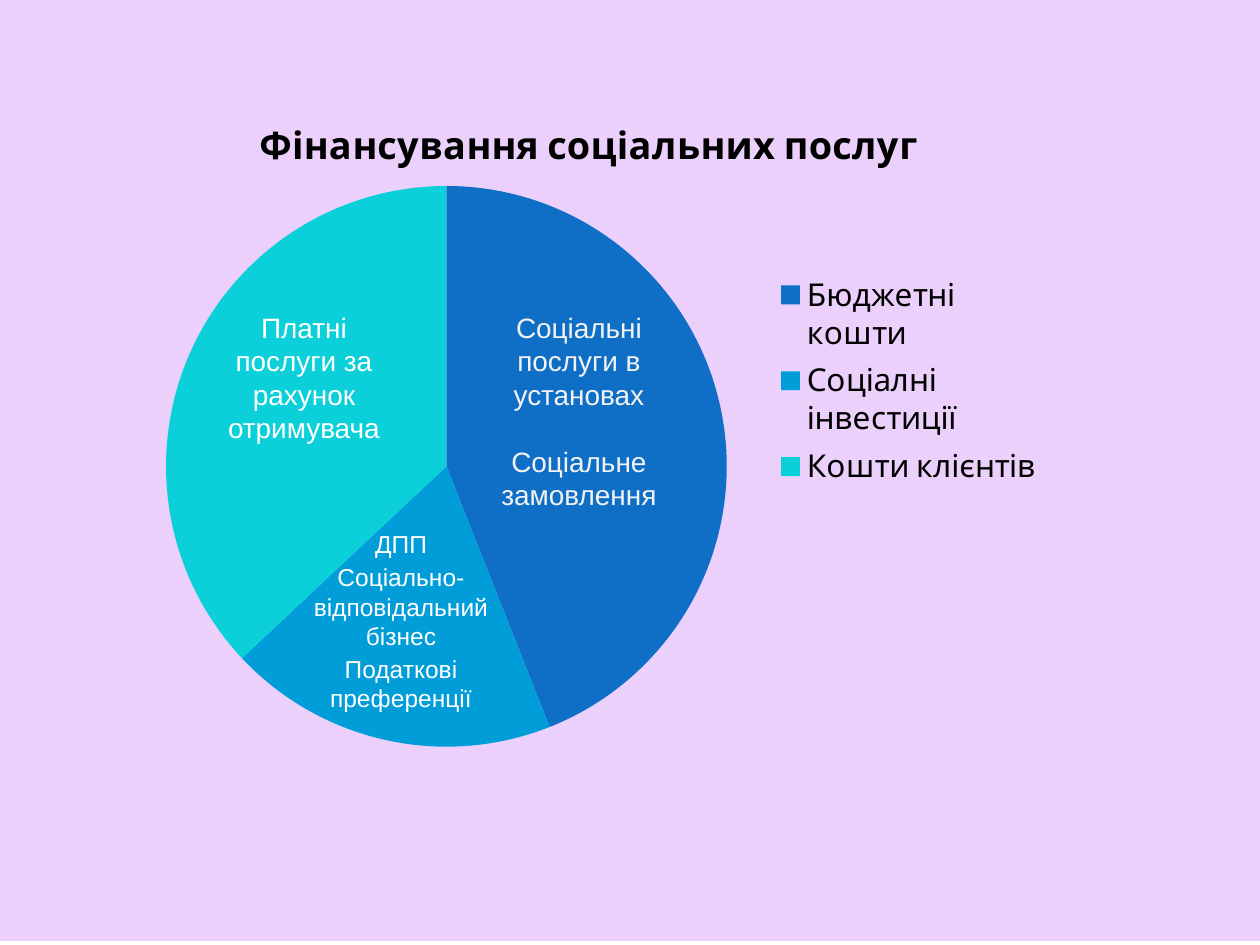
import pptx
import pptx.chart.data
import pptx.dml.color
import pptx.enum.chart
import pptx.enum.shapes
import pptx.enum.text
import pptx.oxml
import pptx.util

RGBColor = pptx.dml.color.RGBColor
Pt = pptx.util.Pt

LILAC = RGBColor(0xEB, 0xD0, 0xFC)
BLACK = RGBColor(0x00, 0x00, 0x00)
WHITE = RGBColor(0xFF, 0xFF, 0xFF)
OFF_WHITE = RGBColor(0xF2, 0xF2, 0xF2)
SLICE_COLORS = [
    RGBColor(0x0F, 0x6F, 0xC6),
    RGBColor(0x00, 0x9D, 0xD9),
    RGBColor(0x0B, 0xD0, 0xD9),
]
SLIDE_BOX = (0, 0, 1260, 945)
CHART_BOX = (126, 91, 926, 674)
LAYOUT_XML = (
    '<c:layout xmlns:c="http://schemas.openxmlformats.org/drawingml/2006/chart">'
    '<c:manualLayout>{target}<c:xMode val="edge"/><c:yMode val="edge"/>'
    '<c:x val="{x}"/><c:y val="{y}"/><c:w val="{w}"/><c:h val="{h}"/>'
    '</c:manualLayout></c:layout>'
)


def px(length):
    return pptx.util.Emu(round(length * 914400 / 126))


def place(box):
    return [px(length) for length in box]


def layout(x, y, w, h, target=""):
    """Chart layout element, in fractions of the chart's size."""
    return pptx.oxml.parse_xml(LAYOUT_XML.format(x=x, y=y, w=w, h=h, target=target))


def style_font(font, size, color, name, bold=False):
    font.size = Pt(size)
    font.color.rgb = color
    font.name = name
    font.bold = bold


def add_backdrop(slide, box):
    left, top, width, height = box
    shape = slide.shapes.add_shape(
        pptx.enum.shapes.MSO_SHAPE.RECTANGLE, *place((left, top - 4, width, height)))
    shape.shadow.inherit = False
    shape.fill.solid()
    shape.fill.fore_color.rgb = LILAC
    shape.line.fill.background()


def add_funding_chart(slide, box):
    data = pptx.chart.data.CategoryChartData()
    data.categories = ["Бюджетні кошти", "Соціалні інвестиції", "Кошти клієнтів"]
    data.add_series("Series 1", (44, 19, 37))
    chart = slide.shapes.add_chart(
        pptx.enum.chart.XL_CHART_TYPE.PIE, *place(box), data).chart
    style_font(chart.font, 18, BLACK, "Cabin")

    chart.has_title = True
    run = chart.chart_title.text_frame.paragraphs[0].add_run()
    run.text = "Фінансування соціальних послуг"
    style_font(run.font, 21.6, BLACK, "Cabin", bold=True)
    chart.chart_title.include_in_layout = False

    chart.has_legend = True
    legend = chart.legend
    legend.position = pptx.enum.chart.XL_LEGEND_POSITION.RIGHT
    legend.include_in_layout = False
    style_font(legend.font, 18, BLACK, "Cabin")
    legend_position = legend._element.find(pptx.oxml.ns.qn("c:legendPos"))
    legend_position.addnext(layout(0.7, 0.26, 0.29, 0.34))

    plot_area = chart._chartSpace.chart.plotArea
    for old_layout in plot_area.findall(pptx.oxml.ns.qn("c:layout")):
        plot_area.remove(old_layout)
    plot_area.insert(
        0, layout(0.043, 0.141, 0.606, 0.832, '<c:layoutTarget val="inner"/>'))

    plot = chart.plots[0]
    plot.vary_by_categories = True
    for index, color in enumerate(SLICE_COLORS):
        point_format = plot.series[0].points[index].format
        point_format.fill.solid()
        point_format.fill.fore_color.rgb = color
        point_format.line.fill.background()


def add_slice_label(slide, box, texts, size, color, first_gap, gap):
    """Centred text, with gaps in points above the first and later paragraphs."""
    frame = slide.shapes.add_textbox(*place(box)).text_frame
    frame.word_wrap = True
    for index, text in enumerate(texts):
        paragraph = frame.add_paragraph() if index else frame.paragraphs[0]
        paragraph.alignment = pptx.enum.text.PP_ALIGN.CENTER
        paragraph.space_before = Pt(gap if index else first_gap)
        run = paragraph.add_run()
        run.text = text
        style_font(run.font, size, color, "Arial")


def add_slice_labels(slide, box):
    left, top = box[:2]
    labels = [
        ((352, 213, 202, 217), ["Соціальні послуги в установах", "Соціальне замовлення"],
         16, OFF_WHITE, 0, 19),
        ((77, 213, 202, 149), ["Платні послуги за рахунок отримувача"],
         16, WHITE, 0, 0),
        ((174, 432, 202, 198),
         ["ДПП", "Соціально-відповідальний бізнес", "Податкові преференції"],
         14, WHITE, 2, 2),
    ]
    for (x, y, width, height), *content in labels:
        add_slice_label(slide, (left + x, top + y, width, height), *content)


def main():
    presentation = pptx.Presentation()
    presentation.slide_width, presentation.slide_height = place(SLIDE_BOX[2:])
    slide = presentation.slides.add_slide(presentation.slide_layouts[6])
    add_backdrop(slide, SLIDE_BOX)
    add_funding_chart(slide, CHART_BOX)
    add_slice_labels(slide, CHART_BOX)
    presentation.save("out.pptx")


if __name__ == "__main__":
    main()
